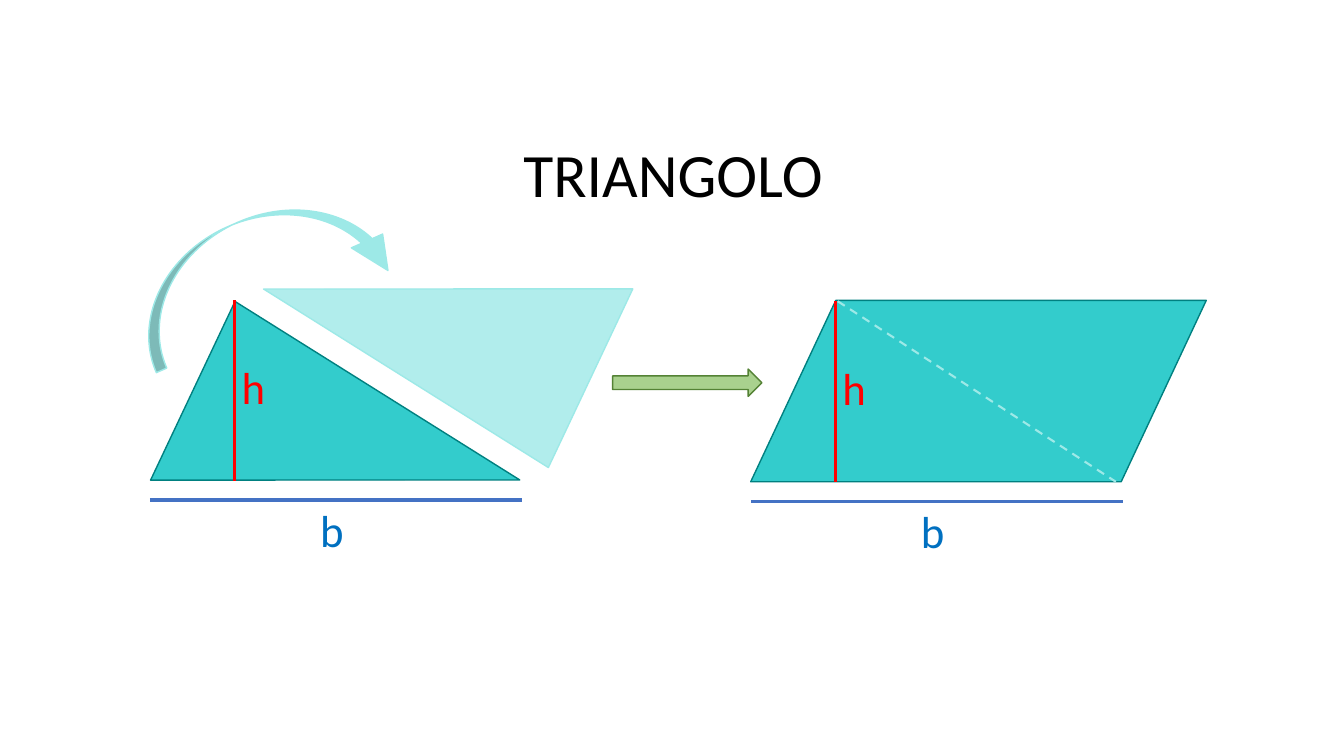
"""Builds the slide that turns a triangle into a parallelogram."""
from pptx import Presentation
from pptx.dml.color import RGBColor
from pptx.enum.dml import MSO_LINE
from pptx.enum.shapes import MSO_CONNECTOR, MSO_SHAPE
from pptx.enum.text import MSO_ANCHOR, PP_ALIGN
from pptx.oxml.ns import qn
from pptx.util import Cm, Pt
from lxml import etree

STRAIGHT = MSO_CONNECTOR.STRAIGHT
DASH = MSO_LINE.DASH
TRIANGLE = MSO_SHAPE.ISOSCELES_TRIANGLE
PARALLELOGRAM = MSO_SHAPE.PARALLELOGRAM
RIGHT_ARROW = MSO_SHAPE.RIGHT_ARROW
CURVED_ARROW = MSO_SHAPE.CURVED_UP_ARROW
MIDDLE, TOP = MSO_ANCHOR.MIDDLE, MSO_ANCHOR.TOP
CENTER, LEFT = PP_ALIGN.CENTER, PP_ALIGN.LEFT

COLORS = {
    "black": "000000", "teal": "33CCCC", "dark teal": "008080",
    "pale teal": "B1EDEC", "light teal": "9DE9E7", "green": "A9D18E",
    "dark green": "548235", "red": "FF0000", "base line": "4472C4",
    "base text": "0070C0",
}


class Board:
    def __init__(self, slide):
        self.s = slide
        self.font = "Calibri"

    def color(self, name):
        return RGBColor.from_string(COLORS[name])

    def text(self, text, x, y, w, h, size, color, align=LEFT, anchor=TOP, wrap=False):
        tf = self.s.shapes.add_textbox(Cm(x), Cm(y), Cm(w), Cm(h)).text_frame
        tf.word_wrap = wrap
        tf.vertical_anchor = anchor
        p = tf.paragraphs[0]
        p.text = text
        p.alignment = align
        p.font.name = self.font
        p.font.size = Pt(size)
        p.font.color.rgb = self.color(color)

    def shape(self, kind, x, y, w, h, fill, line, adj=(), rotation=0, flips=()):
        sp = self.s.shapes.add_shape(kind, Cm(x), Cm(y), Cm(w), Cm(h))
        sp.shadow.inherit = False
        sp.fill.solid()
        sp.fill.fore_color.rgb = self.color(fill)
        sp.line.color.rgb = self.color(line)
        sp.line.width = Pt(1)
        sp.rotation = rotation
        for i, value in enumerate(adj):
            sp.adjustments[i] = value
        for flip in flips:
            sp.element.spPr.find(qn("a:xfrm")).set(flip, "1")

    def line(self, x1, y1, x2, y2, color, width=2.25, dash=None):
        c = self.s.shapes.add_connector(STRAIGHT, Cm(x1), Cm(y1), Cm(x2), Cm(y2))
        c.line.color.rgb = self.color(color)
        c.line.width = Pt(width)
        c.line.dash_style = dash
        etree.SubElement(c.element.spPr, qn("a:effectLst"))

    def measures(self, x, y):
        self.line(x + 2.14, y, x + 2.14, y - 4.57, "red")
        self.text("h", x + 2.06, y - 3.18, 1.4, 0.94, 32, "red")
        self.line(x, y + 0.48, x + 9.38, y + 0.48, "base line")
        self.text("b", x + 4.04, y + 0.43, 1.12, 1.63, 32, "base text")


def main():
    prs = Presentation()
    prs.slide_width, prs.slide_height = Cm(33.87), Cm(19.05)
    board = Board(prs.slides.add_slide(prs.slide_layouts[6]))

    board.text("TRIANGOLO", 2.36, 2.51, 29.21, 3.68, 44, "black", CENTER, MIDDLE, True)
    board.shape(PARALLELOGRAM, 18.92, 7.57, 11.48, 4.57, "teal", "dark teal", [0.469])
    board.line(21.11, 7.59, 28.12, 12.14, "light teal", 1.5, DASH)
    board.shape(RIGHT_ARROW, 15.44, 9.3, 3.76, 0.69, "green", "dark green")

    for x, y, fill, line, flips in (
        (6.17, 7.44, "teal", "dark teal", ()),
        (8.59, 3.53, "pale teal", "light teal", ("flipH", "flipV")),
    ):
        board.shape(TRIANGLE, x, y, 4.98, 8.41, fill, line, [0.201], 115.3, flips)

    for x, y in ((3.78, 12.12), (18.92, 12.15)):
        board.measures(x, y)

    board.shape(CURVED_ARROW, 3.12, 5.49, 6.81, 2.64, "light teal", "light teal",
                [0.109, 0.326, 0.339], 336.2, ["flipV"])
    prs.save("out.pptx")


if __name__ == "__main__":
    main()
